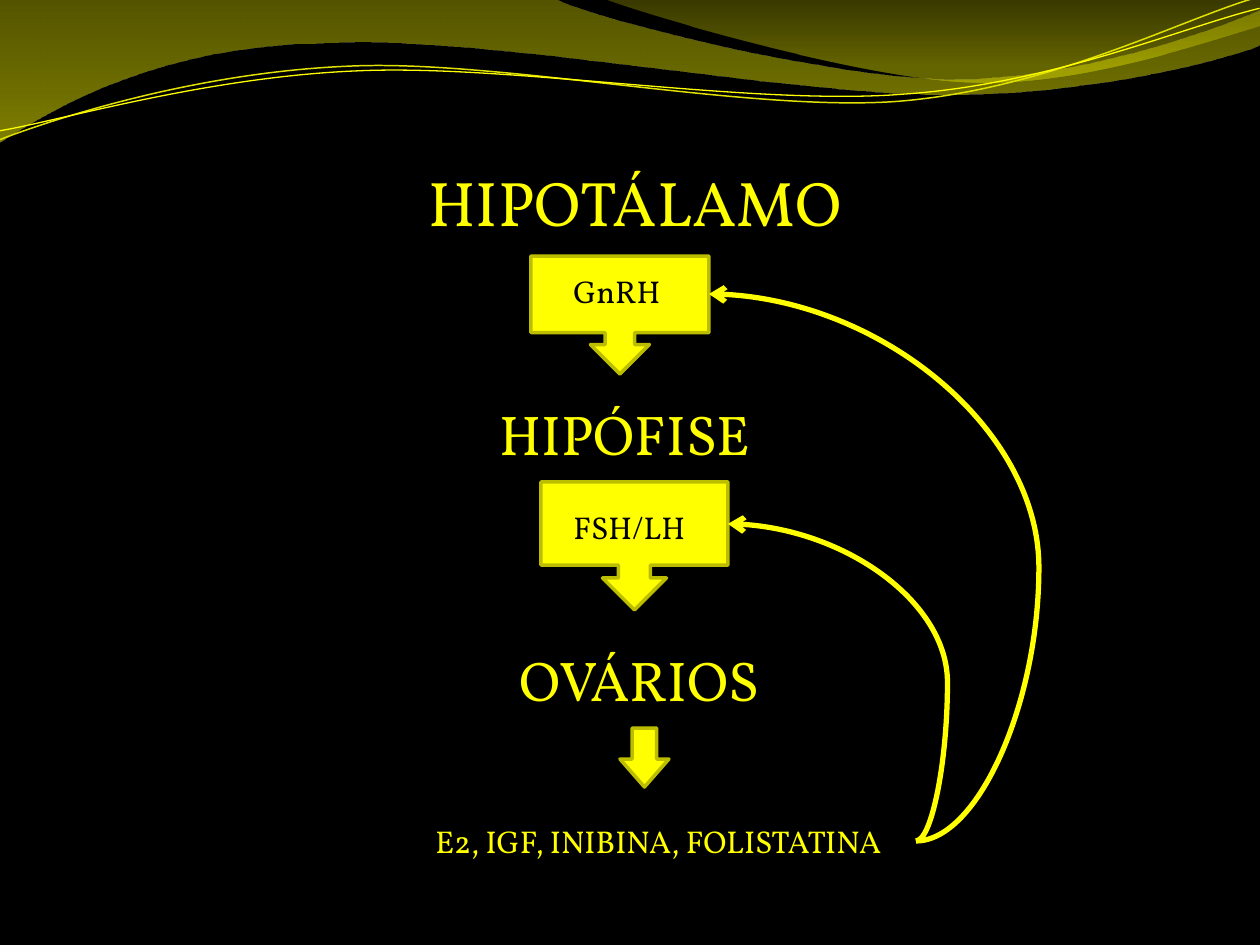
"""Build a slide on the hormonal feedback between hypothalamus, pituitary and ovaries."""
from lxml import etree
from pptx import Presentation
from pptx.dml.color import RGBColor
from pptx.enum.shapes import MSO_CONNECTOR, MSO_SHAPE
from pptx.enum.text import MSO_AUTO_SIZE, PP_ALIGN
from pptx.oxml.ns import qn
from pptx.util import Pt

PX = 914400 / 126
BLANK_LAYOUT = 6
CENTER, LEFT = PP_ALIGN.CENTER, PP_ALIGN.LEFT
CALLOUT, ARROW = MSO_SHAPE.DOWN_ARROW_CALLOUT, MSO_SHAPE.DOWN_ARROW
CURVE = MSO_CONNECTOR.CURVE
FONT = "Vollkorn"
COLORS = {"black": "000000", "yellow": "FFFF00", "olive": "BDBD00",
          "lime": "E1E100", "bright": "E7E700"}

BANDS = [
    {"start": (0, 0),
     "path": [(554, -1), (600, 21, 837, 79, 955, 79), (1075, 79, 1207, 33, 1260, 11),
              (1261, 45), (1239, 55, 1096, 96, 940, 94), (784, 94, 481, 35, 324, 43),
              (163, 45, 58, 105, -1, 142)],
     "stops": [(0, "olive", 45), (1, "bright", 55)]},
    {"start": (604, -1),
     "path": [(641, 14, 859, 78, 969, 82), (1079, 87, 1211, 40, 1260, 26), (1260, 0)],
     "stops": [(0, "olive", 30), (0.8, "lime", 45)]},
]
WAVE_ROTATION = 357.3
WAVE_LINES = [
    {"start": (-3, 110), "color": "lime", "width": 0.85,
     "path": [(58, 90, 199, 52, 350, 53), (499, 53, 745, 118, 896, 114),
              (1049, 109, 1184, 45, 1260, 27)]},
    {"start": (-2, 101), "color": "yellow", "width": 0.75,
     "path": [(58, 94, 207, 57, 357, 58), (509, 58, 750, 112, 902, 107),
              (1052, 104, 1188, 52, 1262, 38)]},
]
ARROWS = [
    (CALLOUT, (531, 256, 178, 118), None),
    (CALLOUT, (541, 482, 187, 128), None),
    (ARROW, (620, 728, 49, 59), (0.5, 0.57)),
]
LABELS = [
    ("HIPOTÁLAMO", (384, 157, 502, 89), {"size": 36, "align": CENTER}),
    ("OVÁRIOS", (472, 639, 335, 81), {"size": 32, "align": CENTER}),
    ("HIPÓFISE", (433, 393, 384, 81), {"size": 32, "align": CENTER}),
    ("GnRH", (561, 266, 118, 50), {"color": "black"}),
    ("FSH/LH", (561, 502, 147, 50), {"color": "black"}),
    ("E2, IGF, INIBINA, FOLISTATINA", (423, 816, 493, 50), {}),
]
FEEDBACK_START = (916, 841)
FEEDBACKS = [((728, 524), -16800), ((709, 294), -59400)]


def rgb(name):
    return RGBColor.from_string(COLORS[name])


def emu(lengths):
    return [round(length * PX) for length in lengths]


def set_line(line, color, width):
    line.color.rgb = rgb(color)
    line.width = Pt(width)


def add_path(slide, start, path, close):
    """Draw a path whose six-number segments are cubic Bézier curves."""
    anchors = [start] + [segment[-2:] for segment in path]
    left, top = (min(values) for values in zip(*anchors))
    builder = slide.shapes.build_freeform(*start, scale=PX)
    builder.add_line_segments(anchors[1:], close=close)
    shape = builder.convert_to_shape()
    shape.shadow.inherit = False
    lines = list(shape._element.spPr.iter(qn("a:lnTo")))
    for element, segment in zip(lines, path):
        if len(segment) == 2:
            continue
        element.tag = qn("a:cubicBezTo")
        for child in list(element):
            element.remove(child)
        for x, y in zip(segment[::2], segment[1::2]):
            etree.SubElement(element, qn("a:pt"), x=str(x - left), y=str(y - top))
    return shape


def add_band(slide, band):
    shape = add_path(slide, band["start"], band["path"], True)
    shape.line.fill.background()
    shape.fill.gradient()
    shape.fill.gradient_angle = 270
    for stop, (position, color, _) in zip(shape.fill.gradient_stops, band["stops"]):
        stop.position = position
        stop.color.rgb = rgb(color)
    fill_colors = shape._element.spPr.iter(qn("a:srgbClr"))
    for element, (_, _, opacity) in zip(fill_colors, band["stops"]):
        etree.SubElement(element, qn("a:alpha"), val=str(opacity * 1000))


def add_wave_line(slide, wave):
    shape = add_path(slide, wave["start"], wave["path"], False)
    shape.rotation = WAVE_ROTATION
    shape.fill.background()
    set_line(shape.line, wave["color"], wave["width"])


def add_arrow(slide, kind, box, adjustments):
    shape = slide.shapes.add_shape(kind, *emu(box))
    shape.shadow.inherit = False
    shape.fill.solid()
    shape.fill.fore_color.rgb = rgb("yellow")
    set_line(shape.line, "olive", 2)
    for index, value in enumerate(adjustments or ()):
        shape.adjustments[index] = value


def add_text(slide, text, box, size=18, color="yellow", align=LEFT):
    frame = slide.shapes.add_textbox(*emu(box)).text_frame
    frame.word_wrap = True
    frame.auto_size = MSO_AUTO_SIZE.SHAPE_TO_FIT_TEXT
    paragraph = frame.paragraphs[0]
    paragraph.alignment = align
    run = paragraph.add_run()
    run.text = text
    run.font.name = FONT
    run.font.size = Pt(size)
    run.font.color.rgb = rgb(color)


def add_feedback(slide, end, bend):
    connector = slide.shapes.add_connector(CURVE, *emu(FEEDBACK_START + end))
    set_line(connector.line, "yellow", 3)
    properties = connector._element.spPr
    guides = properties.find(qn("a:prstGeom")).find(qn("a:avLst"))
    etree.SubElement(guides, qn("a:gd"), name="adj1", fmla=f"val {bend}")
    etree.SubElement(properties.find(qn("a:ln")), qn("a:tailEnd"), type="arrow")
    etree.SubElement(properties, qn("a:effectLst"))


def main():
    presentation = Presentation()
    presentation.slide_width, presentation.slide_height = emu((1260, 945))
    slide = presentation.slides.add_slide(presentation.slide_layouts[BLANK_LAYOUT])
    slide.background.fill.solid()
    slide.background.fill.fore_color.rgb = rgb("black")
    for band in BANDS:
        add_band(slide, band)
    for wave in WAVE_LINES:
        add_wave_line(slide, wave)
    for kind, box, adjustments in ARROWS:
        add_arrow(slide, kind, box, adjustments)
    for text, box, style in LABELS:
        add_text(slide, text, box, **style)
    for end, bend in FEEDBACKS:
        add_feedback(slide, end, bend)
    presentation.save("out.pptx")


if __name__ == "__main__":
    main()
